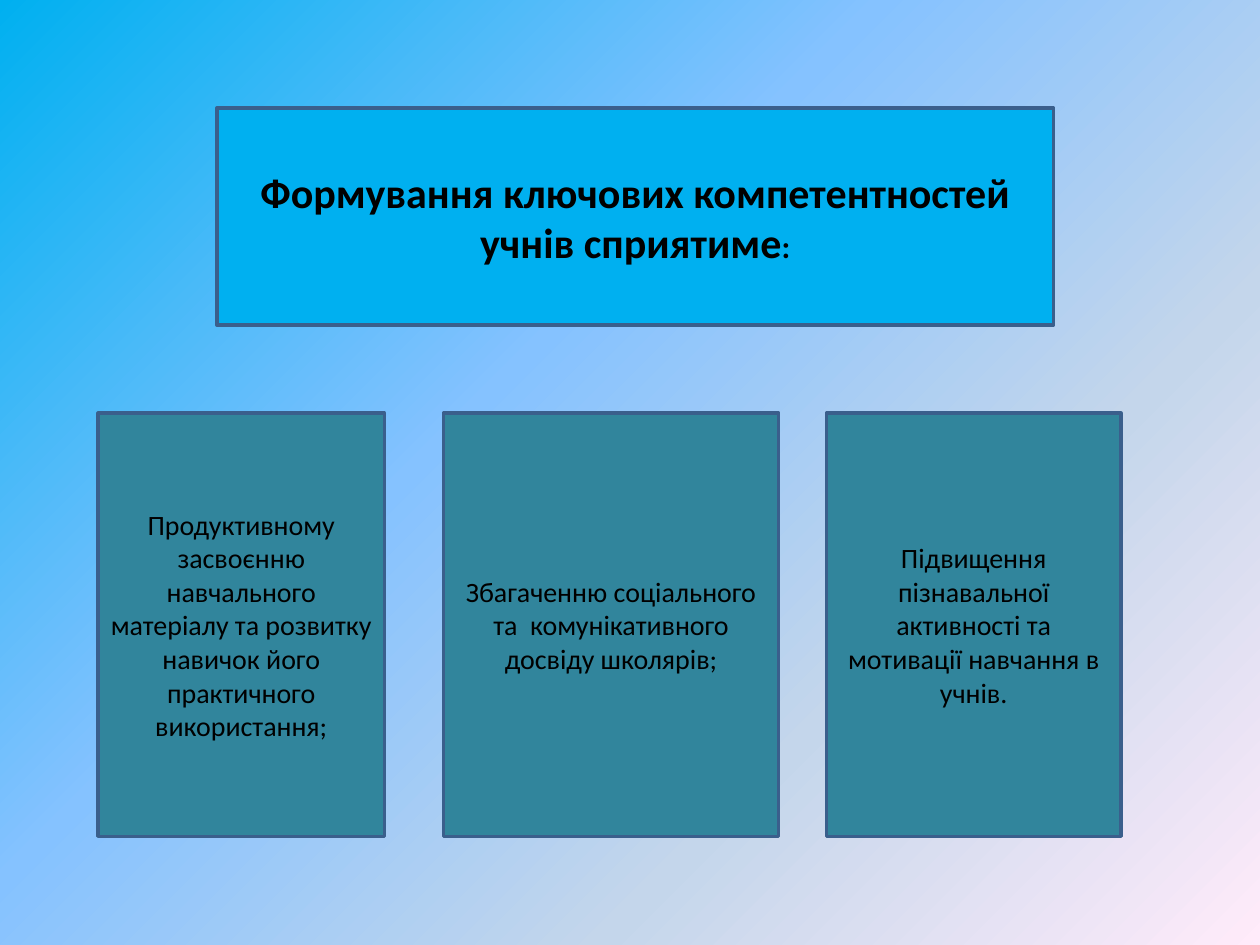
from pptx import Presentation
from pptx.dml.color import RGBColor
from pptx.enum.shapes import MSO_SHAPE
from pptx.enum.text import MSO_ANCHOR, MSO_AUTO_SIZE, PP_ALIGN
from pptx.oxml.ns import qn
from pptx.util import Cm, Pt
from lxml import etree

RECTANGLE = MSO_SHAPE.RECTANGLE
MIDDLE = MSO_ANCHOR.MIDDLE
NO_AUTOFIT = MSO_AUTO_SIZE.NONE
CENTER = PP_ALIGN.CENTER

SKY = RGBColor(0x00, 0xB0, 0xF0)
TEAL = RGBColor(0x31, 0x85, 0x9C)
OUTLINE = RGBColor(0x3A, 0x5F, 0x8C)
BLACK = RGBColor(0, 0, 0)

# Content: runs are (text, size), columns are (left, width, text) in cm
TITLE_RUNS = [("Формування ключових компетентностей учнів сприятиме", 24), (":", 18)]
TITLE_BOX = (4.37, 2.18, 16.87, 4.37)
COLUMNS = [
    (1.98, 5.77, "Продуктивному засвоєнню навчального матеріалу та розвитку "
                 "навичок його практичного використання;"),
    (8.94, 6.76, "Збагаченню соціального та  комунікативного досвіду школярів;"),
    (16.66, 5.94, "Підвищення пізнавальної активності та мотивації навчання в учнів."),
]
COLUMN_TOP, COLUMN_HEIGHT, COLUMN_SIZE = 8.33, 8.53, 16
BACKGROUND_STOPS = [
    (0, SKY),
    (40, RGBColor(0x85, 0xC2, 0xFF)),
    (70, RGBColor(0xC4, 0xD6, 0xEB)),
    (100, RGBColor(0xFF, 0xEB, 0xFA)),
]


def set_background(slide):
    fill = slide.background.fill
    fill.gradient()
    fill.gradient_angle = 315
    stop_list = slide.element.find(".//" + qn("a:gsLst"))
    for stop in list(stop_list):
        stop_list.remove(stop)
    for percent, color in BACKGROUND_STOPS:
        stop = etree.SubElement(stop_list, qn("a:gs"), pos=str(percent * 1000))
        etree.SubElement(stop, qn("a:srgbClr"), val=str(color))


def format_box(shape, color, runs, bold):
    shape.fill.solid()
    shape.fill.fore_color.rgb = color
    shape.line.color.rgb = OUTLINE
    shape.line.width = Pt(2)
    frame = shape.text_frame
    frame_format = {"word_wrap": True, "auto_size": NO_AUTOFIT, "vertical_anchor": MIDDLE}
    for name, value in frame_format.items():
        setattr(frame, name, value)
    paragraph = frame.paragraphs[0]
    paragraph.alignment = CENTER
    for text, size in runs:
        run = paragraph.add_run()
        run.text = text
        for name, value in {"name": "Calibri", "size": Pt(size), "bold": bold}.items():
            setattr(run.font, name, value)
        run.font.color.rgb = BLACK


def main():
    presentation = Presentation()
    presentation.slide_width, presentation.slide_height = Cm(25.4), Cm(19.05)
    slide = presentation.slides.add_slide(presentation.slide_layouts[5])
    set_background(slide)

    # Title
    title = slide.shapes.title
    for name, value in zip(("left", "top", "width", "height"), TITLE_BOX):
        setattr(title, name, Cm(value))
    format_box(title, SKY, TITLE_RUNS, True)

    # Outcome columns
    for left, width, text in COLUMNS:
        column = slide.shapes.add_shape(
            RECTANGLE, Cm(left), Cm(COLUMN_TOP), Cm(width), Cm(COLUMN_HEIGHT))
        column.shadow.inherit = False
        format_box(column, TEAL, [(text, COLUMN_SIZE)], False)

    presentation.save("out.pptx")


if __name__ == "__main__":
    main()
